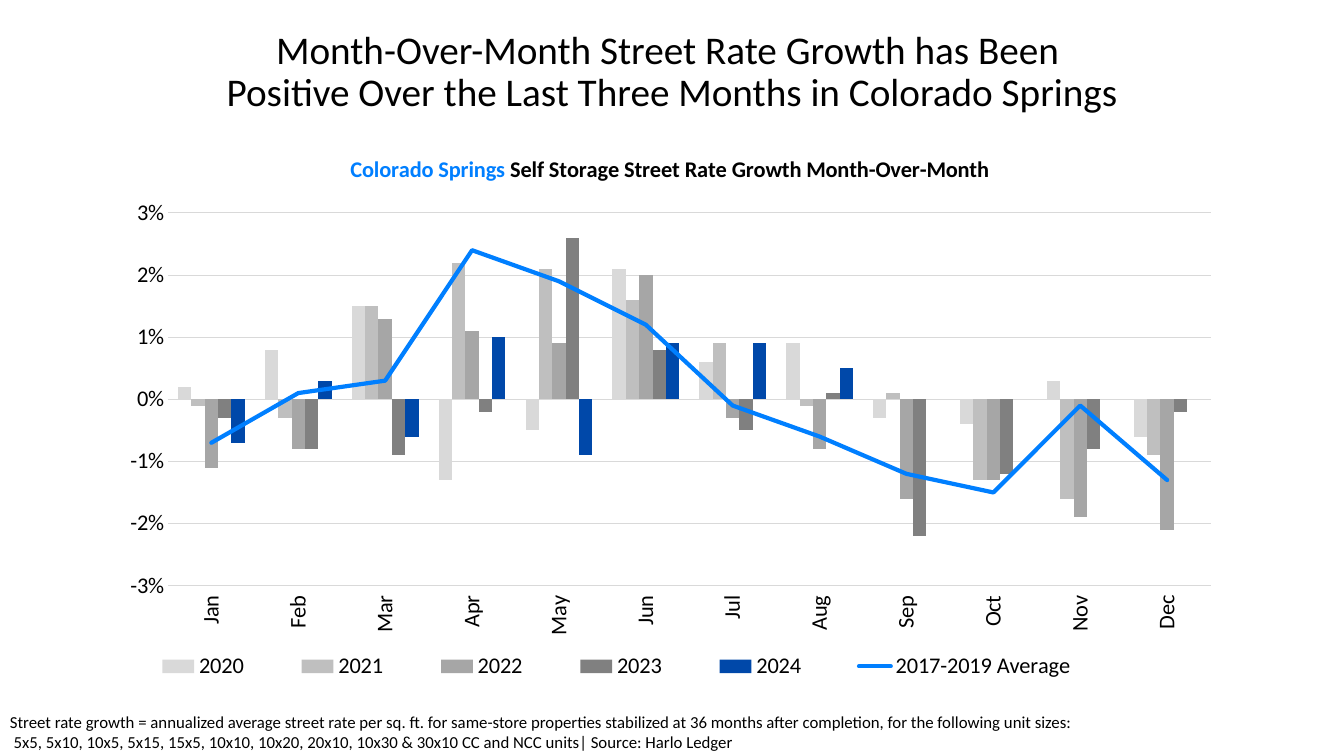
from pptx import Presentation
from pptx.chart.data import CategoryChartData
from pptx.dml.color import RGBColor
from pptx.enum import chart as ch, text
from pptx.oxml import parse_xml
from pptx.oxml.ns import nsdecls, qn
from pptx.util import Inches, Pt

FONT = "Calibri"
COLORS = {
    "text": "000000", "grid": "D9D9D9", "accent": "007FFF",
    "2020": "D9D9D9", "2021": "BFBFBF", "2022": "A6A6A6",
    "2023": "808080", "2024": "0048A9",
}
MONTHS = "Jan Feb Mar Apr May Jun Jul Aug Sep Oct Nov Dec".split()
AVERAGE = "2017-2019 Average"
GROWTH = {
    "2020": [0.002, 0.008, 0.015, -0.013, -0.005, 0.021,
             0.006, 0.009, -0.003, -0.004, 0.003, -0.006],
    "2021": [-0.001, -0.003, 0.015, 0.022, 0.021, 0.016,
             0.009, -0.001, 0.001, -0.013, -0.016, -0.009],
    "2022": [-0.011, -0.008, 0.013, 0.011, 0.009, 0.02,
             -0.003, -0.008, -0.016, -0.013, -0.019, -0.021],
    "2023": [-0.003, -0.008, -0.009, -0.002, 0.026, 0.008,
             -0.005, 0.001, -0.022, -0.012, -0.008, -0.002],
    "2024": [-0.007, 0.003, -0.006, 0.01, -0.009, 0.009,
             0.009, 0.005, None, None, None, None],
    AVERAGE: [-0.007, 0.001, 0.003, 0.024, 0.019, 0.012,
              -0.001, -0.006, -0.012, -0.015, -0.001, -0.013],
}
TITLE = ["Month-Over-Month Street Rate Growth has Been ",
         "Positive Over the Last Three Months in Colorado Springs"]
NOTE = ["Street rate growth = annualized average street rate per sq. ft. for same-store "
        "properties stabilized at 36 months after completion, for the following unit sizes:",
        " 5x5, 5x10, 10x5, 5x15, 15x5, 10x10, 10x20, 20x10, 10x30 & 30x10 "
        "CC and NCC units| Source: Harlo Ledger"]


def rgb(name):
    """Return the named palette colour."""
    return RGBColor.from_string(COLORS[name])


def style(font, size, color="text", bold=False):
    """Set the face, size, colour and weight of a font."""
    font.name, font.size, font.bold = FONT, Pt(size), bold
    font.color.rgb = rgb(color)


def write(tf, lines, size, align, spacing=1.0):
    """Write each line as its own paragraph."""
    for i, line in enumerate(lines):
        p = tf.paragraphs[0] if i == 0 else tf.add_paragraph()
        p.alignment, p.line_spacing = align, spacing
        r = p.add_run()
        r.text = line
        style(r.font, size)


def add_title(s, x, y, w, h):
    """Place the slide title in the given box."""
    sp = s.shapes.title
    sp.left, sp.top, sp.width, sp.height = map(Inches, (x, y, w, h))
    sp.text_frame.vertical_anchor = text.MSO_ANCHOR.TOP
    write(sp.text_frame, TITLE, 28, text.PP_ALIGN.CENTER, 0.9)


def add_note(s, x, y, w, h):
    """Place the definition and source note in the given box."""
    tf = s.shapes.add_textbox(*map(Inches, (x, y, w, h))).text_frame
    tf.word_wrap = False
    write(tf, NOTE, 12, text.PP_ALIGN.LEFT)


def place(el, x, y, w=None, h=None, inner=False):
    """Give a chart part a manual layout in fractions of the chart."""
    for old in el.findall(qn("c:layout")):
        el.remove(old)
    modes = '<c:layoutTarget val="inner"/>' if inner else ""
    modes += '<c:xMode val="edge"/><c:yMode val="edge"/>'
    sizes = "".join(f'<c:{k} val="{v}"/>' for k, v in zip("xywh", (x, y, w, h))
                    if v is not None)
    layout = parse_xml(f'<c:layout {nsdecls("c")}><c:manualLayout>{modes}{sizes}'
                       '</c:manualLayout></c:layout>')
    overlay = el.find(qn("c:overlay"))
    if overlay is None:
        el.insert(0, layout)
    else:
        overlay.addprevious(layout)


def move_average_to_line(chart):
    """Turn the last column series into a line on the same axes."""
    bar = chart.plots[0]._element
    ser = bar.findall(qn("c:ser"))[-1]
    for el in ser.findall(qn("c:invertIfNegative")):
        ser.remove(el)
    axes = "".join(f'<c:axId val="{a.get("val")}"/>' for a in bar.findall(qn("c:axId")))
    line = parse_xml(f'<c:lineChart {nsdecls("c")}><c:grouping val="standard"/>'
                     f'<c:varyColors val="0"/><c:marker val="1"/>{axes}</c:lineChart>')
    line.insert(2, ser)
    bar.addnext(line)
    average = chart.plots[1].series[0]
    average.smooth = False
    average.marker.style = ch.XL_MARKER_STYLE.NONE
    average.format.line.color.rgb = rgb("accent")
    average.format.line.width = Pt(3)
    average.format.line._ln.set("cap", "rnd")


def format_axes(chart):
    """Format the month axis and the percentage axis."""
    months, rates = chart.category_axis, chart.value_axis
    for axis in (months, rates):
        axis.major_tick_mark = axis.minor_tick_mark = ch.XL_TICK_MARK.NONE
        style(axis.tick_labels.font, 16)
    months.tick_label_position = ch.XL_TICK_LABEL_POSITION.LOW
    months._element.find(qn("c:txPr")).find(qn("a:bodyPr")).set("rot", "-5400000")
    rates.minimum_scale, rates.maximum_scale, rates.major_unit = -0.03, 0.03, 0.01
    rates.tick_labels.number_format = "0%"
    rates.tick_labels.number_format_is_linked = False
    rates.format.line.fill.background()
    rates.has_major_gridlines = True
    for part in (months, rates.major_gridlines):
        part.format.line.color.rgb = rgb("grid")
        part.format.line.width = Pt(0.75)


def add_growth_chart(s, x, y, w, h):
    """Place the monthly growth chart in the given box."""
    data = CategoryChartData(number_format="0.0%")
    data.categories = MONTHS
    for name, values in GROWTH.items():
        data.add_series(name, values)
    chart = s.shapes.add_chart(ch.XL_CHART_TYPE.COLUMN_CLUSTERED,
                               *map(Inches, (x, y, w, h)), data).chart
    style(chart.font, 16)
    move_average_to_line(chart)
    columns = chart.plots[0]
    columns.vary_by_categories = False
    columns.gap_width, columns.overlap = 150, 0
    for series in columns.series:
        series.format.fill.solid()
        series.format.fill.fore_color.rgb = rgb(series.name)
        series.invert_if_negative = False
    format_axes(chart)

    chart.has_title = True
    p = chart.chart_title.text_frame.paragraphs[0]
    for words, color in (("Colorado Springs", "accent"),
                         (" Self Storage Street Rate Growth Month-Over-Month", "text")):
        r = p.add_run()
        r.text = words
        style(r.font, 16, color, True)

    chart.has_legend = True
    chart.legend.position = ch.XL_LEGEND_POSITION.BOTTOM
    chart.legend.include_in_layout = False
    style(chart.legend.font, 16)

    place(chart.chart_title._element, 0.21, 0.03)
    place(chart.legend._element, 0, 0.92, 0.9, 0.07)
    place(columns._element.getparent(), 0.05, 0.14, 0.93, 0.67, inner=True)


def main():
    """Build and save the slide."""
    prs = Presentation()
    prs.slide_width, prs.slide_height = Inches(13.33), Inches(7.5)
    s = prs.slides.add_slide(prs.slide_layouts[5])
    add_title(s, 0, 0.25, 13.33, 0.95)
    add_note(s, 0, 7.01, 11.78, 0.48)
    add_growth_chart(s, 1.11, 1.34, 11.12, 5.52)
    prs.save("out.pptx")


if __name__ == "__main__":
    main()
